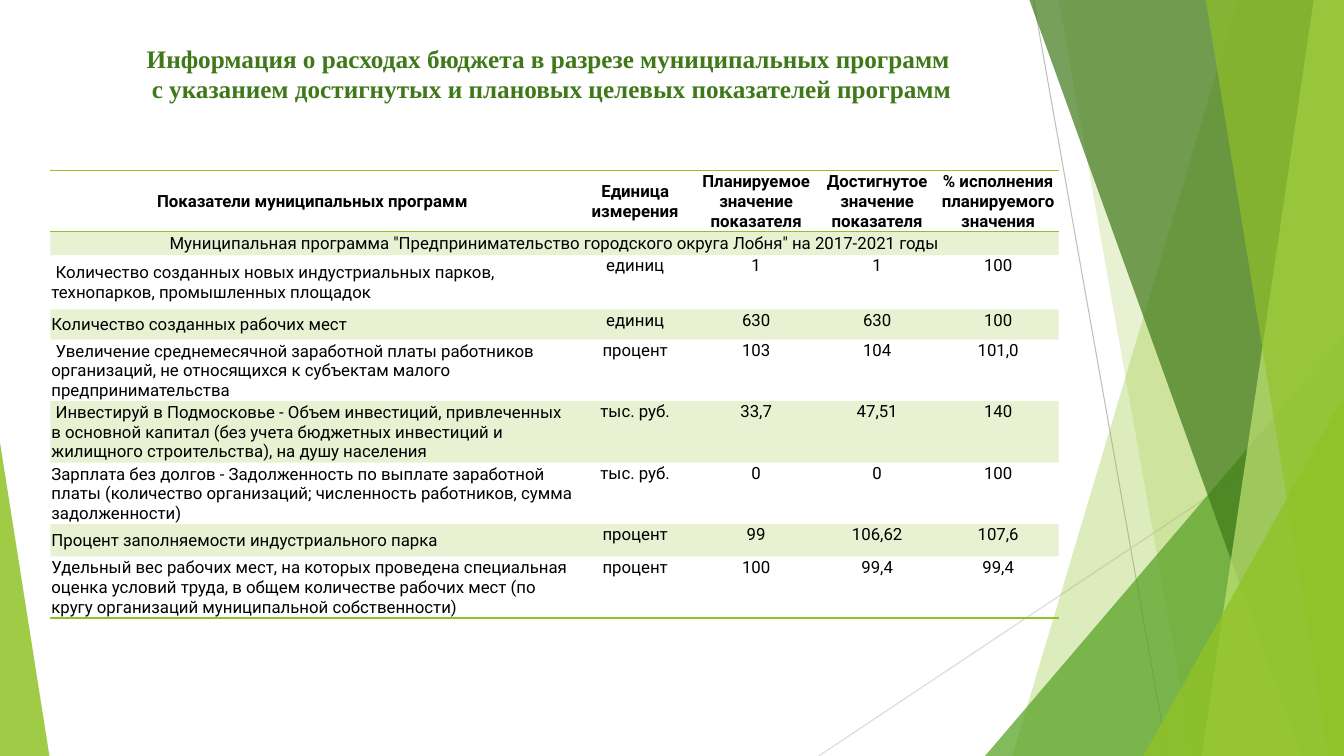
from lxml import etree
from pptx import Presentation
from pptx.dml.color import RGBColor
from pptx.enum.shapes import MSO_CONNECTOR, MSO_SHAPE
from pptx.enum.text import MSO_ANCHOR, PP_ALIGN
from pptx.oxml.ns import qn
from pptx.util import Inches, Pt

LEFT, CENTER = PP_ALIGN.LEFT, PP_ALIGN.CENTER
TOP, MIDDLE = MSO_ANCHOR.TOP, MSO_ANCHOR.MIDDLE
TRIANGLE, STRAIGHT = MSO_SHAPE.ISOSCELES_TRIANGLE, MSO_CONNECTOR.STRAIGHT

SLIDE_W, SLIDE_H = 13.33, 7.5
GREEN, DARK_GREEN, BLACK = "90C226", "3F7819", "000000"
PLAIN_TABLE_STYLE = "{2D5ABB26-0587-4C30-8999-92F81FD0307C}"

TITLE = ("Информация о расходах бюджета в разрезе муниципальных программ \n"
         "с указанием достигнутых и плановых целевых показателей программ")
HEADINGS = ["Показатели муниципальных программ", "Единица измерения",
            "Планируемое значение показателя", "Достигнутое значение показателя",
            "% исполнения планируемого значения"]
PROGRAM = 'Муниципальная программа "Предпринимательство городского округа Лобня" на 2017-2021 годы'
INDICATORS = [
    [" Количество созданных новых индустриальных парков, технопарков, промышленных площадок",
     "единиц", "1", "1", "100"],
    ["Количество созданных рабочих мест", "единиц", "630", "630", "100"],
    [" Увеличение среднемесячной заработной платы работников организаций, "
     "не относящихся к субъектам малого предпринимательства",
     "процент", "103", "104", "101,0"],
    [" Инвестируй в Подмосковье - Объем инвестиций, привлеченных в основной капитал "
     "(без учета бюджетных инвестиций и жилищного строительства), на душу населения",
     "тыс. руб.", "33,7", "47,51", "140"],
    ["Зарплата без долгов - Задолженность по выплате заработной платы "
     "(количество организаций; численность работников, сумма задолженности)",
     "тыс. руб.", "0", "0", "100"],
    ["Процент заполняемости индустриального парка", "процент", "99", "106,62", "107,6"],
    ["Удельный вес рабочих мест, на которых проведена специальная оценка условий труда, "
     "в общем количестве рабочих мест (по кругу организаций муниципальной собственности)",
     "процент", "100", "99,4", "99,4"],
]
COLUMN_WIDTHS = [5.2] + [1.2] * 4
ROW_HEIGHTS = [0.59, 0.23, 0.54, 0.3, 0.59, 0.59, 0.59, 0.32, 0.59]


def rgb(color):
    return RGBColor.from_string(color)


def paint(filled, color, opacity=100):
    """Give a shape or cell a solid fill with opacity in percent."""
    filled.fill.solid()
    filled.fill.fore_color.rgb = rgb(color)
    for srgb in filled.fill._xPr.find(qn("a:solidFill")):
        etree.SubElement(srgb, qn("a:alpha"), val=str(opacity * 1000))


def write(frame, text, font="Roboto", size=12, color=BLACK, bold=False, align=CENTER):
    paragraph = frame.paragraphs[0]
    paragraph.text = text.replace("\n", "\v")
    paragraph.alignment = align
    for run in paragraph.runs:
        run.font.name, run.font.size, run.font.bold = font, Pt(size), bold
        run.font.color.rgb = rgb(color)


def finish_facet(facet, color, opacity):
    paint(facet, color, opacity)
    facet.line.fill.background()
    facet.shadow.inherit = False


def add_ray(slide, start, end, color):
    ray = slide.shapes.add_connector(STRAIGHT, *map(Inches, start + end))
    ray.line.color.rgb = rgb(color)
    ray.line.width = Pt(0.75)
    etree.SubElement(ray._element.spPr, qn("a:effectLst"))


def add_band(slide, box, top_x, bottom_x, color, opacity):
    """Fill the box to the right of a slanted edge."""
    left, top, width, height = box
    right, bottom = left + width, top + height
    corners = [(left + top_x, top), (right, top), (right, bottom), (left + bottom_x, bottom)]
    corners = [(Inches(x), Inches(y)) for x, y in corners]
    builder = slide.shapes.build_freeform(*corners[0], scale=1.0)
    builder.add_line_segments(corners[1:], close=True)
    finish_facet(builder.convert_to_shape(), color, opacity)


def add_wedge(slide, box, x, y, apex, color, opacity):
    """Add a right triangle reaching the lower right corner of the box."""
    left, top, width, height = box
    wedge = slide.shapes.add_shape(
        TRIANGLE, *map(Inches, (left + x, top + y, width - x, height - y)))
    wedge.adjustments[0] = apex
    finish_facet(wedge, color, opacity)


def add_right_facets(slide, box):
    left, top, width, height = box
    bottom = top + height
    add_ray(slide, (left + 0.48, top), (left + 1.81, bottom), "BFBFBF")
    add_ray(slide, (left + width, top + 4.03), (left - 1.65, bottom), "D9D9D9")
    add_band(slide, box, 2.51, 0.27, GREEN, 30)
    add_band(slide, box, 0.73, 2.06, GREEN, 20)
    add_wedge(slide, box, 0, 3.33, 1, "54A021", 72)
    add_band(slide, box, 0.44, 3.14, DARK_GREEN, 70)
    add_band(slide, box, 3.26, 2.15, "C0E474", 70)
    add_band(slide, box, 2.19, 3.41, GREEN, 65)
    add_wedge(slide, box, 1.57, 3.93, 1, GREEN, 80)


def add_title(slide, box):
    frame = slide.shapes.add_textbox(*map(Inches, box)).text_frame
    frame.word_wrap = True
    frame.vertical_anchor = TOP
    write(frame, TITLE, font="Times New Roman", size=18, color=DARK_GREEN, bold=True)


def add_cell_borders(cell, sides):
    """Rule the given sides; borders must precede the fill in the XML."""
    properties = cell._tc.get_or_add_tcPr()
    for position, side in enumerate(sides):
        border = etree.Element(qn(f"a:{side}"), w=str(Pt(1)))
        fill = etree.SubElement(border, qn("a:solidFill"))
        etree.SubElement(fill, qn("a:srgbClr"), val=GREEN)
        properties.insert(position, border)


def add_indicator_table(slide, left, top):
    rows = [HEADINGS, [PROGRAM] + [""] * 4] + INDICATORS
    last = len(rows) - 1
    size = sum(COLUMN_WIDTHS), sum(ROW_HEIGHTS)
    table = slide.shapes.add_table(
        len(rows), len(HEADINGS), *map(Inches, (left, top) + size)).table
    table.first_row = table.horz_banding = False
    table._tbl.tblPr.find(qn("a:tableStyleId")).text = PLAIN_TABLE_STYLE
    for column, width in zip(table.columns, COLUMN_WIDTHS):
        column.width = Inches(width)
    for r, (texts, height) in enumerate(zip(rows, ROW_HEIGHTS)):
        table.rows[r].height = Inches(height)
        for c, text in enumerate(texts):
            cell = table.cell(r, c)
            cell.margin_left = cell.margin_right = cell.margin_top = Inches(0.01)
            cell.margin_bottom = 0
            cell.vertical_anchor = MIDDLE if r < 2 or c == 0 else TOP
            write(cell.text_frame, text, bold=r == 0,
                  align=LEFT if r > 1 and c == 0 else CENTER)
            if r % 2:
                paint(cell, GREEN, 20)
            else:
                cell.fill.background()
            add_cell_borders(cell, {0: ["lnT", "lnB"], last: ["lnB"]}.get(r, []))
    table.cell(1, 0).merge(table.cell(1, len(HEADINGS) - 1))


def main():
    deck = Presentation()
    deck.slide_width, deck.slide_height = Inches(SLIDE_W), Inches(SLIDE_H)
    slide = deck.slides.add_slide(deck.slide_layouts[6])
    add_right_facets(slide, (9.77, 0, 3.56, SLIDE_H))
    add_wedge(slide, (0, 0, 0.49, SLIDE_H), 0, 4.39, 0, GREEN, 85)
    add_title(slide, (0.65, 0.38, 9.64, 0.92))
    add_indicator_table(slide, 0.5, 1.69)
    deck.save("out.pptx")


if __name__ == "__main__":
    main()
